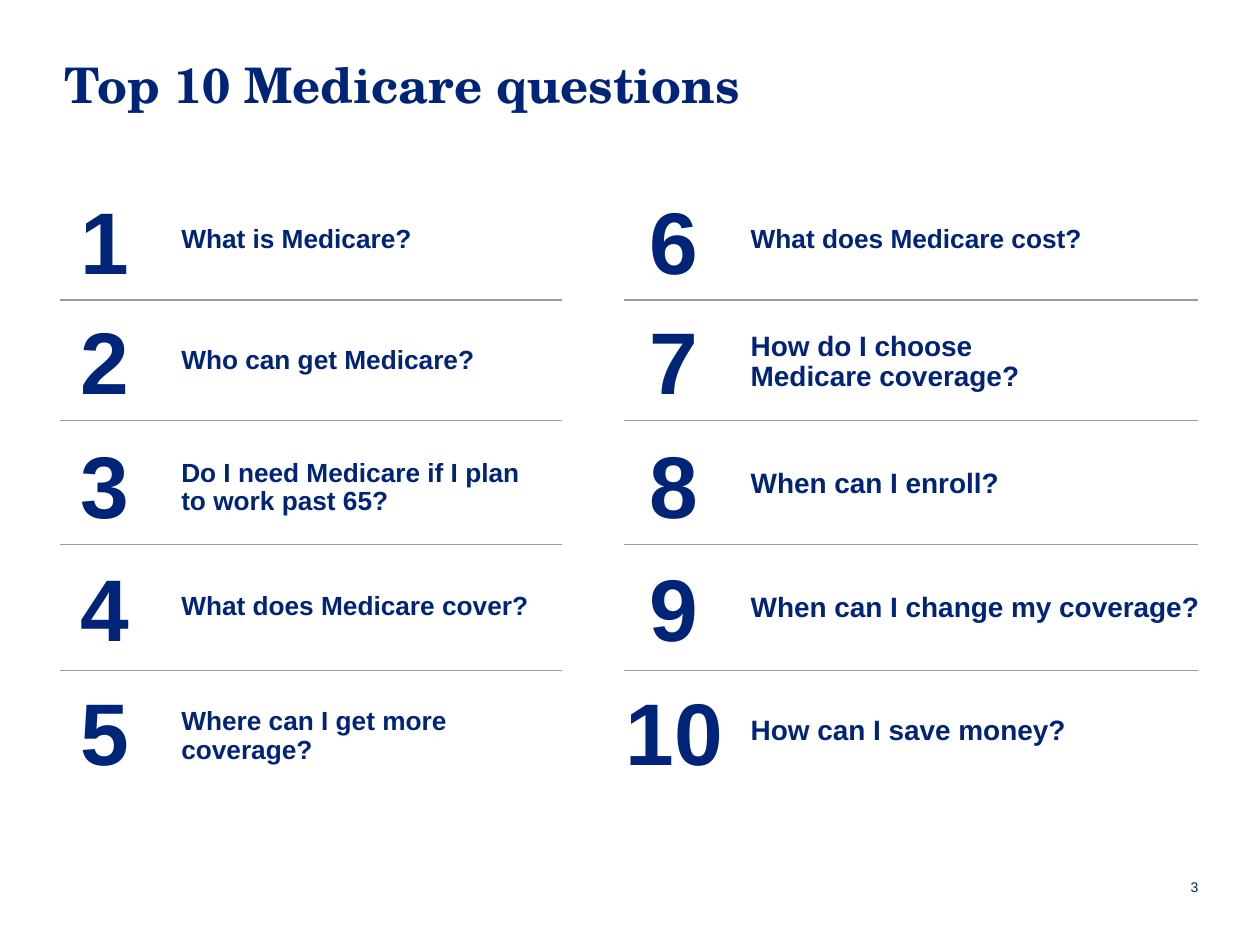
"""Build the slide that lists the top ten Medicare questions in two columns."""
from lxml import etree
from pptx import Presentation
from pptx import util as u
from pptx.dml.color import RGBColor
from pptx.enum import shapes, text
from pptx.oxml import ns

NAVY = RGBColor(0x00, 0x24, 0x77)
RULE_GREY = RGBColor(0x9B, 0x9B, 0x9B)
ROW_TOPS = [1.41, 2.36, 3.34, 4.32, 5.3]
RULE_TOPS = [2.38, 3.34, 4.32, 5.32]
NUMBER_WIDTH, NUMBER_HEIGHT = 0.88, 1.17
QUESTION_INDENT, QUESTION_HEIGHT = 0.95, 0.36

COLUMNS = [
    (0.39, 0.48, 4.46, 1, [
        (["What is Medicare?"], 15, 0.33, 4.78),
        (["Who can get Medicare?"], 15, 0.34, 4.78),
        (["Do I need Medicare if I plan to work past 65?"], 15, 0.26, 2.99),
        (["What does Medicare cover?"], 15, 0.34, 4.78),
        (["Where can I get more coverage?"], 15, 0.27, 3.35),
    ]),
    (4.91, 4.95, 9.51, 6, [
        (["What does Medicare cost?"], 15, 0.33, 4.14),
        (["How do I choose ", "Medicare coverage?"], 16, 0.23, 4.14),
        (["When can I enroll?"], 16, 0.34, 3.2),
        (["When can I change my coverage?"], 16, 0.34, 4.14),
        (["How can I save money?"], 16, 0.34, 3.4),
    ]),
]


def add_text(left, top, width, height, lines, size, bold=True):
    box = slide.shapes.add_textbox(*map(u.Inches, (left, top, width, height)))
    frame = box.text_frame
    frame.word_wrap = True
    paragraph = frame.paragraphs[0]
    for index, line in enumerate(lines):
        if index:
            paragraph.add_line_break()
        run = paragraph.add_run()
        run.text = line
        style(run.font, "Arial", size, bold)
    return frame, paragraph


def style(font, name, size, bold):
    font.name, font.size, font.bold = name, u.Pt(size), bold
    font.color.rgb = NAVY


deck = Presentation()
deck.slide_width, deck.slide_height = u.Inches(10), u.Inches(7.5)
slide = deck.slides.add_slide(deck.slide_layouts[5])

title = slide.shapes.title
title.left, title.top = u.Inches(0.41), u.Inches(0.38)
title.width, title.height = u.Inches(9.1), u.Inches(0.8)
title.text_frame.vertical_anchor = text.MSO_ANCHOR.TOP
title.text_frame.auto_size = text.MSO_AUTO_SIZE.NONE
heading = title.text_frame.paragraphs[0]
heading.alignment = text.PP_ALIGN.LEFT
heading_run = heading.add_run()
heading_run.text = "Top 10 Medicare questions"
style(heading_run.font, "TeX Gyre Schola", 28, True)

for left, rule_start, rule_end, first_number, questions in COLUMNS:
    for row, (lines, size, drop, width) in enumerate(questions):
        row_top = ROW_TOPS[row]
        frame, numeral = add_text(left, row_top, NUMBER_WIDTH, NUMBER_HEIGHT,
                                  [str(first_number + row)], 50)
        frame.word_wrap = False
        frame.vertical_anchor = text.MSO_ANCHOR.MIDDLE
        frame.margin_left = frame.margin_top = frame.margin_right = 0
        frame.margin_bottom = u.Inches(0.18)
        numeral.alignment = text.PP_ALIGN.CENTER

        _, question = add_text(left + QUESTION_INDENT, row_top + drop, width,
                               QUESTION_HEIGHT, lines, size)
        question.line_spacing = 0.9
        question.space_after = u.Pt(6)

    for rule_top in RULE_TOPS:
        rule = slide.shapes.add_connector(
            shapes.MSO_CONNECTOR.STRAIGHT,
            *map(u.Inches, (rule_end, rule_top, rule_start, rule_top)))
        rule.line.color.rgb = RULE_GREY
        rule.line.width = u.Pt(0.75)
        etree.SubElement(rule._element.spPr, ns.qn("a:effectLst"))

page_frame, page_number = add_text(9.22, 6.83, 0.39, 0.41, ["3"], 8, bold=False)
page_frame.vertical_anchor = text.MSO_ANCHOR.MIDDLE
page_number.alignment = text.PP_ALIGN.RIGHT

deck.save("out.pptx")
